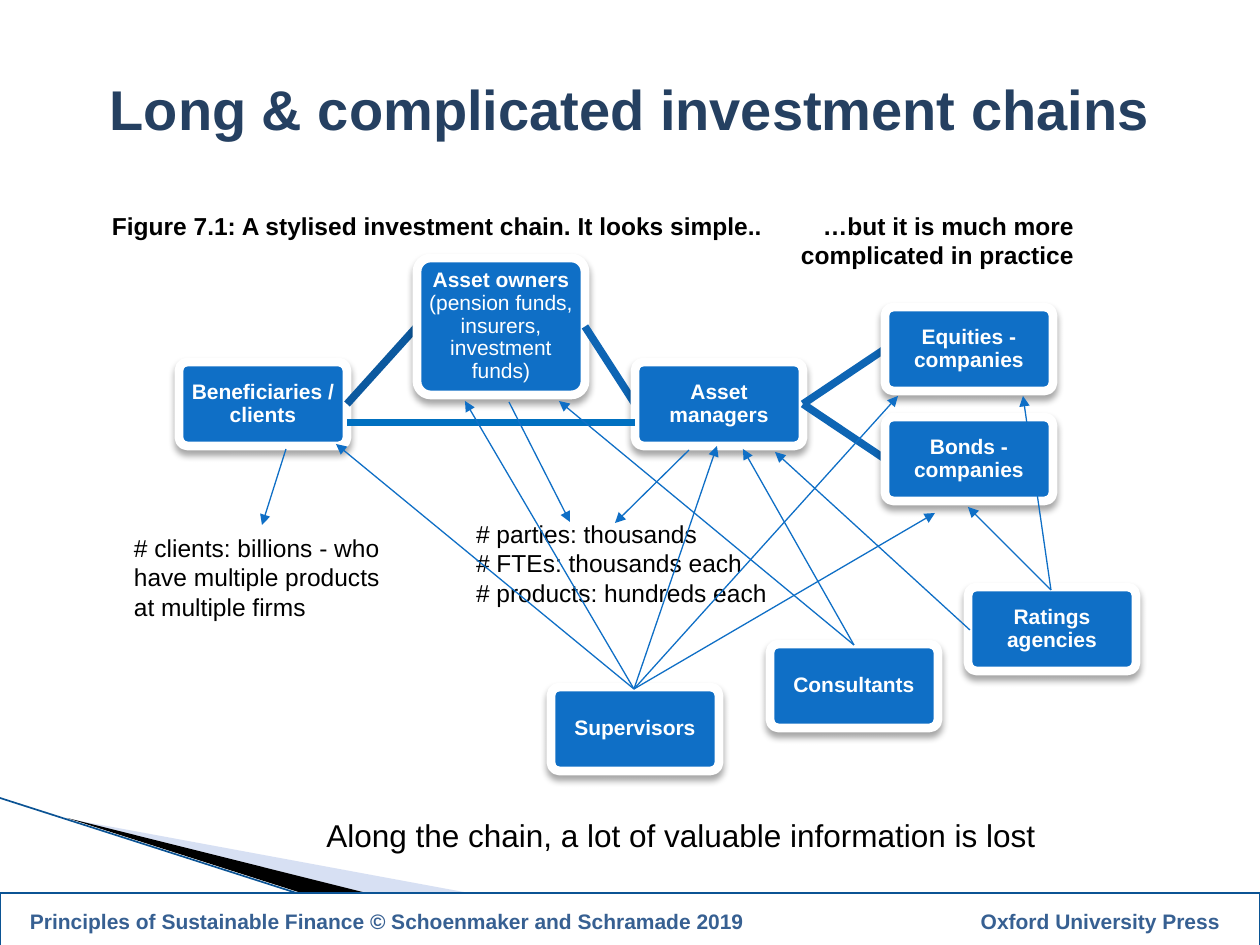
"""Build a slide that shows how long and complicated investment chains are."""
import dataclasses

import lxml.etree
import pptx
import pptx.dml.color
import pptx.enum.shapes
import pptx.enum.text
import pptx.oxml.ns
import pptx.util

ALIGN = pptx.enum.text.PP_ALIGN
ANCHOR = pptx.enum.text.MSO_ANCHOR
SHAPE = pptx.enum.shapes.MSO_SHAPE


@dataclasses.dataclass(frozen=True)
class Theme:
    font: str = "Arial"
    white: str = "FFFFFF"
    black: str = "000000"
    title: str = "254061"
    footer: str = "376092"
    rule: str = "0B5394"
    pale: str = "9DB2E1"
    box: str = "0F6FC6"
    first_link: str = "0C599F"
    link: str = "0E65B4"
    direct_link: str = "0070C0"
    title_size: int = 32
    message_size: int = 18
    note_size: int = 14
    label_size: int = 12


T = Theme()
WIDTH, HEIGHT = 1260, 945
BOX_W, BOX_H = 168, 84
FOOTER_INSET = 30

TITLE = "Long & complicated investment chains"
MESSAGE = "Along the chain, a lot of valuable information is lost"
FOOTER = ("Principles of Sustainable Finance © Schoenmaker and Schramade 2019"
          "\tOxford University Press")

WEDGES = [
    ([(69, 819), (750, HEIGHT), (575, HEIGHT)], T.pale, 40),
    ([(67, 818), (574, HEIGHT), (464, HEIGHT)], T.black, 100),
]
WEDGE_EDGE = ((0, 798), (459, HEIGHT))

BOXES = {
    "beneficiaries": (179, 362, BOX_H, "Beneficiaries / clients", ""),
    "owners": (417, 258, 137, "Asset owners",
               " (pension funds, insurers, investment funds)"),
    "managers": (635, 362, BOX_H, "Asset managers", ""),
    "equities": (885, 307, BOX_H, "Equities - companies", ""),
    "bonds": (885, 417, BOX_H, "Bonds - companies", ""),
    "supervisors": (551, 687, BOX_H, "Supervisors", ""),
    "consultants": (770, 644, BOX_H, "Consultants", ""),
    "ratings": (968, 587, BOX_H, "Ratings agencies", ""),
}
LINKS = {
    "beneficiaries": [("owners", T.first_link)],
    "owners": [("managers", T.link)],
    "managers": [("equities", T.link), ("bonds", T.link)],
}
DIRECT_LINK = ((347, 423), (635, 423))

NOTES = [
    ((100, 205, 730, 72), ALIGN.LEFT, True,
     ["Figure 7.1: A stylised investment chain. It looks simple.."]),
    ((740, 205, 346, 72), ALIGN.RIGHT, True,
     ["…but it is much more complicated in practice"]),
    ((122, 527, 280, 131), ALIGN.LEFT, False,
     ["# clients: billions - who have multiple products at multiple firms"]),
    ((464, 513, 333, 131), ALIGN.LEFT, False,
     ["# parties: thousands", "# FTEs: thousands each",
      "# products: hundreds each"]),
]

ARROWS = [
    ((689, 450), [(615, 523)]),
    ((509, 402), [(570, 522)]),
    ((286, 449), [(262, 525)]),
    ((634, 689), [(336, 444), (465, 401), (717, 446), (898, 396), (935, 513)]),
    ((854, 645), [(743, 449), (559, 401)]),
    ((970, 630), [(775, 452)]),
    ((1051, 590), [(968, 507), (1023, 396)]),
]


def px(n):
    return pptx.util.Emu(round(n * 914400 / 126))


def rgb(value):
    return pptx.dml.color.RGBColor.from_string(value)


def add_xml(parent, tag, **attrs):
    return lxml.etree.SubElement(parent, pptx.oxml.ns.qn(tag), attrs)


def set_alpha(color, percent):
    add_xml(color, "a:alpha", val=str(percent * 1000))


def paint(sp, fill, line=None, width=0):
    sp.shadow.inherit = False
    sp.fill.solid()
    sp.fill.fore_color.rgb = rgb(fill)
    if line:
        sp.line.color.rgb = rgb(line)
        sp.line.width = pptx.util.Pt(width)
    else:
        sp.line.fill.background()


def add_run(p, text, size, color, bold=False):
    r = p.add_run()
    r.text = text
    r.font.name = T.font
    r.font.size = pptx.util.Pt(size)
    r.font.bold = bold
    r.font.color.rgb = rgb(color)


def set_frame(sp, anchor, side, edge):
    tf = sp.text_frame
    tf.word_wrap = True
    tf.vertical_anchor = anchor
    tf.margin_left = tf.margin_right = px(side)
    tf.margin_top = tf.margin_bottom = px(edge)
    return tf


def add_text(s, at, lines, align, anchor, size, color, bold=False):
    tf = set_frame(s.shapes.add_textbox(*map(px, at)), anchor, 12, 6)
    for i, line in enumerate(lines):
        p = tf.add_paragraph() if i else tf.paragraphs[0]
        p.alignment = align
        add_run(p, line, size, color, bold)


def add_line(s, start, end, color, width, arrow=False):
    line = s.shapes.add_connector(pptx.enum.shapes.MSO_CONNECTOR.STRAIGHT,
                                  *map(px, (*start, *end)))
    line.line.color.rgb = rgb(color)
    line.line.width = pptx.util.Pt(width)
    if arrow:
        add_xml(line.line._get_or_add_ln(), "a:tailEnd", type="triangle")
    add_xml(line._element.spPr, "a:effectLst")


def add_wedge(s, points, color, opacity):
    start, *rest = [tuple(map(px, point)) for point in points]
    builder = s.shapes.build_freeform(*start)
    builder.add_line_segments(rest)
    sp = builder.convert_to_shape()
    paint(sp, color)
    set_alpha(sp.fill._xPr.solidFill[0], opacity)


def add_box(s, x, y, h, name, detail):
    sp = s.shapes.add_shape(SHAPE.ROUNDED_RECTANGLE,
                            *map(px, (x, y, BOX_W, h)))
    sp.adjustments[0] = 0.1
    paint(sp, T.box, T.white, 5)
    effects = sp._element.spPr.find(pptx.oxml.ns.qn("a:effectLst"))
    shadow = add_xml(effects, "a:outerShdw", blurRad=str(pptx.util.Pt(4)),
                     dist=str(pptx.util.Pt(3)), dir="5400000", rotWithShape="0")
    set_alpha(add_xml(shadow, "a:srgbClr", val=T.black), 35)
    p = set_frame(sp, ANCHOR.MIDDLE, 1, 1).paragraphs[0]
    p.alignment = ALIGN.CENTER
    p.line_spacing = 0.9
    add_run(p, name, T.label_size, T.white, True)
    if detail:
        add_run(p, detail, T.label_size, T.white)


def add_footer(s):
    sp = s.shapes.add_shape(SHAPE.RECTANGLE, *map(px, (0, 893, WIDTH, 56)))
    paint(sp, T.white, T.rule, 1.5)
    p = set_frame(sp, ANCHOR.MIDDLE, FOOTER_INSET, 0).paragraphs[0]
    p.alignment = ALIGN.LEFT
    tabs = add_xml(p._p.get_or_add_pPr(), "a:tabLst")
    add_xml(tabs, "a:tab", pos=str(px(WIDTH - 70)), algn="r")
    add_run(p, FOOTER, T.label_size, T.footer, True)


def main():
    prs = pptx.Presentation()
    prs.slide_width, prs.slide_height = px(WIDTH), px(HEIGHT)
    s = prs.slides.add_slide(prs.slide_layouts[6])
    for wedge in WEDGES:
        add_wedge(s, *wedge)
    add_line(s, *WEDGE_EDGE, T.rule, 0.95)
    add_text(s, (35, 64, 1190, 89), [TITLE], ALIGN.CENTER, ANCHOR.MIDDLE,
             T.title_size, T.title, True)
    add_footer(s)
    add_text(s, (243, 800, 876, 69), [MESSAGE], ALIGN.CENTER, ANCHOR.MIDDLE,
             T.message_size, T.black)
    for key, (x, y, h, name, detail) in BOXES.items():
        add_box(s, x, y, h, name, detail)
        for target, color in LINKS.get(key, []):
            tx, ty, th = BOXES[target][:3]
            add_line(s, (x + BOX_W, y + h / 2), (tx, ty + th / 2), color, 4.33)
    add_line(s, *DIRECT_LINK, T.direct_link, 4)
    for at, align, bold, lines in NOTES:
        add_text(s, at, lines, align, ANCHOR.TOP, T.note_size, T.black, bold)
    for start, ends in ARROWS:
        for end in ends:
            add_line(s, start, end, T.box, 0.75, arrow=True)
    prs.save("out.pptx")


if __name__ == "__main__":
    main()
